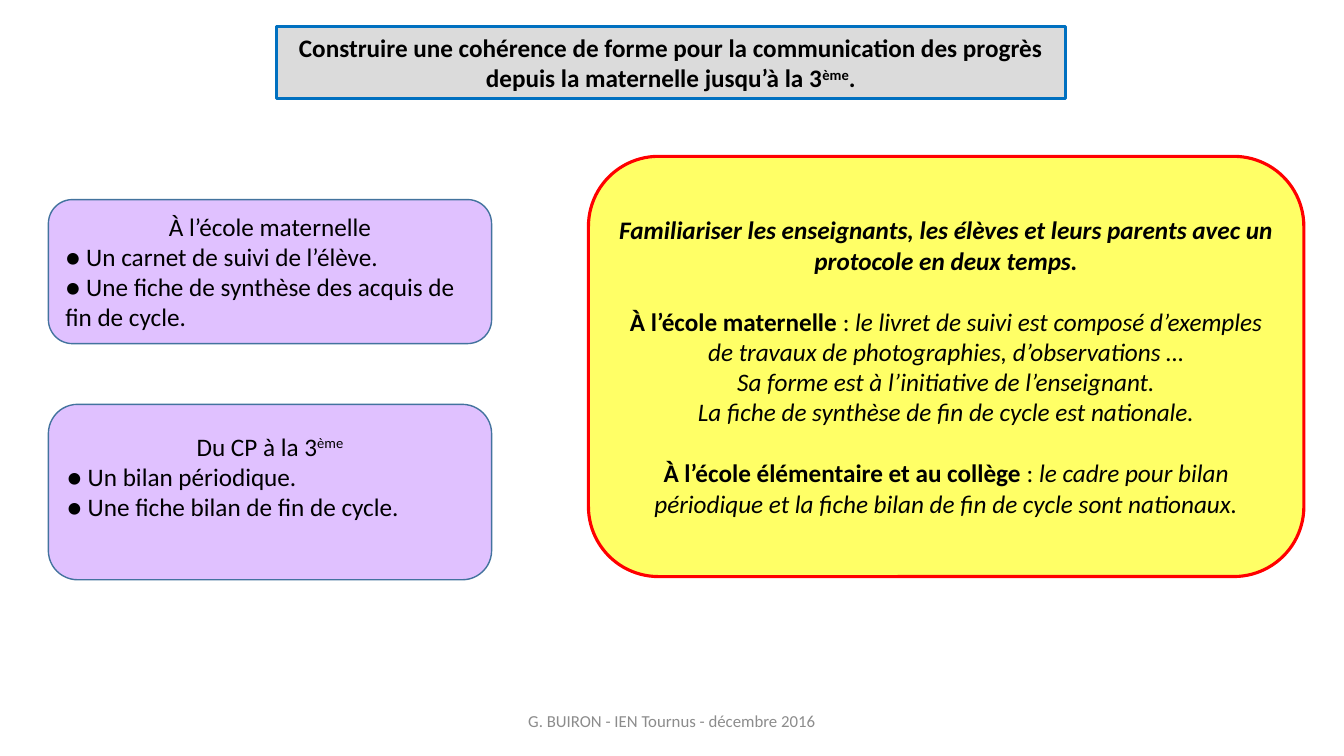
from lxml import etree
from pptx import Presentation
from pptx.dml.color import RGBColor
from pptx.enum.shapes import MSO_SHAPE
from pptx.enum.text import MSO_ANCHOR, MSO_AUTO_SIZE, PP_ALIGN
from pptx.oxml.ns import qn
from pptx.util import Cm, Pt

CENTER, LEFT = PP_ALIGN.CENTER, PP_ALIGN.LEFT
MIDDLE = MSO_ANCHOR.MIDDLE
NO_AUTOFIT = MSO_AUTO_SIZE.NONE
ROUNDED = MSO_SHAPE.ROUNDED_RECTANGLE

BLACK = RGBColor(0x00, 0x00, 0x00)
GREY_TEXT = RGBColor(0x8C, 0x8C, 0x8C)
GREY = RGBColor(0xDB, 0xDB, 0xDB)
BLUE = RGBColor(0x00, 0x70, 0xC0)
LILAC = RGBColor(0xE0, 0xC1, 0xFF)
SLATE = RGBColor(0x43, 0x73, 0x9E)
YELLOW = RGBColor(0xFF, 0xFF, 0x66)
RED = RGBColor(0xFF, 0x00, 0x00)

FONT = "Calibri"
SECTION_GAP = Pt(22)

# Content: paragraphs are (alignment, space before, runs);
# run styles are b = bold, i = italic, ^ = superscript
TITLE = [
    (CENTER, 0, [
        ("Construire une cohérence de forme pour la communication des progrès "
         "depuis la maternelle jusqu’à la 3", "b"),
        ("ème", "b^"), (".", "b")]),
]
NURSERY = [
    (CENTER, 0, [("À l’école maternelle", "")]),
    (LEFT, 0, [("● Un carnet de suivi de l’élève.", "")]),
    (LEFT, 0, [("● Une fiche de synthèse des acquis de fin de cycle.", "")]),
]
PRIMARY = [
    (CENTER, 0, [("Du CP à la 3", ""), ("ème", "^")]),
    (LEFT, 0, [("● Un bilan périodique.", "")]),
    (LEFT, 0, [("● Une fiche bilan de fin de cycle.", "")]),
]
PROTOCOL = [
    (CENTER, 0, [("Familiariser les enseignants, les élèves et leurs parents "
                  "avec un protocole en deux temps.", "bi")]),
    (CENTER, SECTION_GAP, [
        ("À l’école maternelle ", "b"), (": ", ""),
        ("le livret de suivi est composé d’exemples de travaux de "
         "photographies, d’observations …", "i")]),
    (CENTER, 0, [("Sa forme est à l’initiative de l’enseignant.", "i")]),
    (CENTER, 0, [("La fiche de synthèse de fin de cycle est nationale.", "i")]),
    (CENTER, SECTION_GAP, [
        ("À l’école élémentaire et au collège ", "b"), (": ", ""),
        ("le cadre pour bilan périodique et la fiche bilan de fin de cycle "
         "sont nationaux.", "i")]),
]
FOOTER = [(CENTER, 0, [("G. BUIRON - IEN Tournus - décembre 2016", "")])]

# Boxes: left, top, width, height in cm, fill, line, line width, text, bottom inset in cm
BOXES = [
    (1.22, 5.03, 11.17, 3.63, LILAC, SLATE, 1, NURSERY, 0.13),
    (1.22, 10.19, 11.17, 4.42, LILAC, SLATE, 1, PRIMARY, 0.9),
    (14.83, 3.94, 18.03, 10.59, YELLOW, RED, 2.25, PROTOCOL, 0.13),
]


def write_text(shape, paragraphs, size=18, color=BLACK):
    frame = shape.text_frame
    frame.word_wrap = True
    frame.auto_size = NO_AUTOFIT
    frame.vertical_anchor = MIDDLE
    for index, (alignment, space_before, runs) in enumerate(paragraphs):
        paragraph = frame.add_paragraph() if index else frame.paragraphs[0]
        paragraph.alignment = alignment
        paragraph.space_before = space_before
        for text, style in runs:
            run = paragraph.add_run()
            run.text = text
            font = run.font
            font.name, font.size = FONT, Pt(size)
            font.bold, font.italic = "b" in style, "i" in style
            font.color.rgb = color
            if "^" in style:
                run._r.get_or_add_rPr().set("baseline", "30000")


def paint(shape, fill, line, line_width):
    shape.fill.solid()
    shape.fill.fore_color.rgb = fill
    shape.line.color.rgb = line
    shape.line.width = Pt(line_width)


presentation = Presentation()
presentation.slide_width, presentation.slide_height = Cm(33.87), Cm(19.05)
slide = presentation.slides.add_slide(presentation.slide_layouts[5])

# Title in a rounded frame
title = slide.shapes.title
title.left, title.top, title.width, title.height = (
    Cm(6.96), Cm(0.66), Cm(19.89), Cm(1.83))
geometry = etree.SubElement(title.element.spPr, qn("a:prstGeom"), prst="roundRect")
etree.SubElement(geometry, qn("a:avLst"))
paint(title, GREY, BLUE, 2.25)
write_text(title, TITLE)

# School levels on the left, protocol on the right
for left, top, width, height, fill, line, line_width, text, bottom in BOXES:
    box = slide.shapes.add_shape(ROUNDED, Cm(left), Cm(top), Cm(width), Cm(height))
    box.shadow.inherit = False
    paint(box, fill, line, line_width)
    write_text(box, text)
    box.text_frame.margin_bottom = Cm(bottom)

# Footer
footer = slide.shapes.add_textbox(Cm(11.22), Cm(17.66), Cm(11.43), Cm(1.01))
write_text(footer, FOOTER, 12, GREY_TEXT)

presentation.save("out.pptx")
